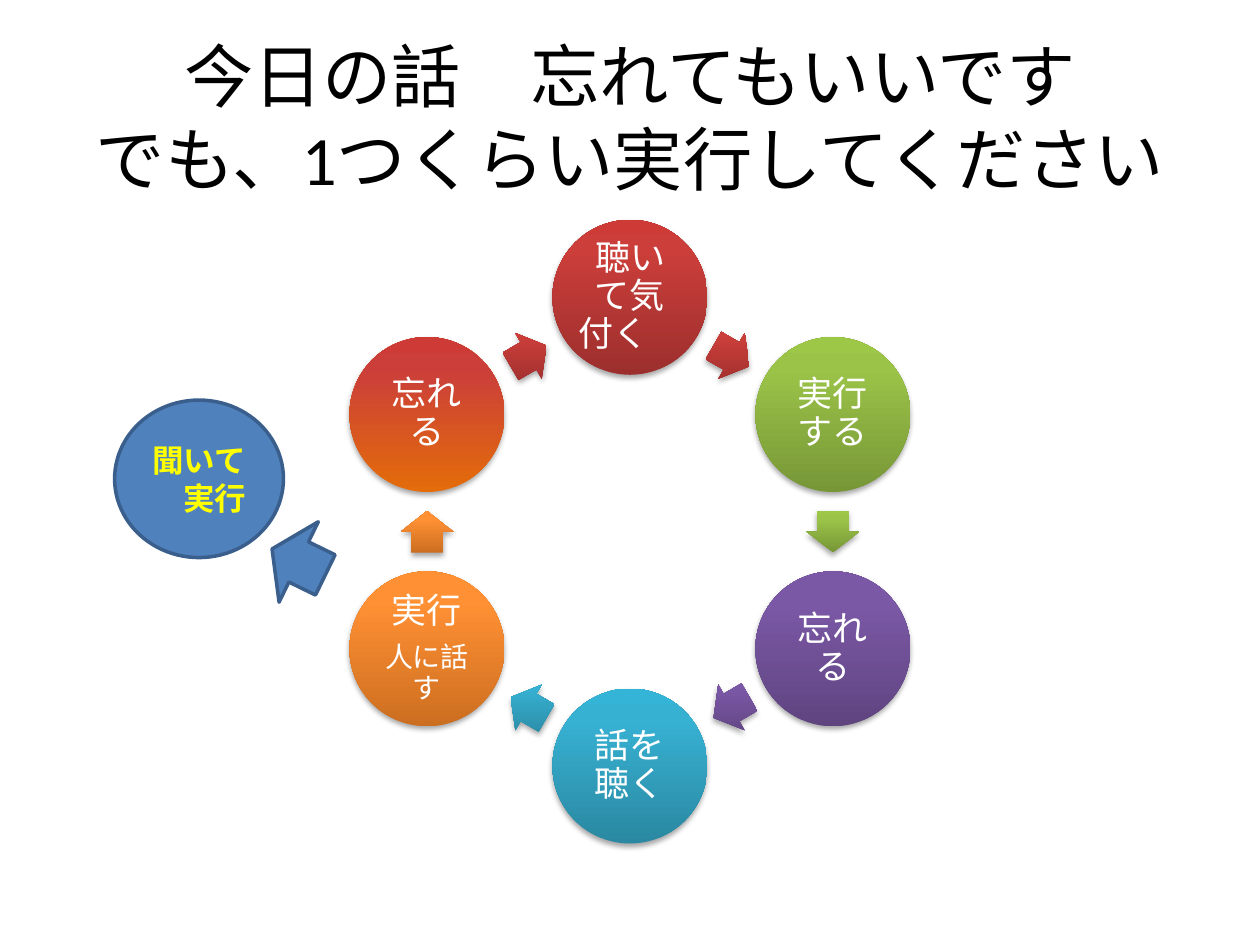
import math
from pptx import Presentation
from pptx import util as u
from pptx.dml.color import RGBColor
from pptx.enum import shapes, text
from pptx.oxml import parse_xml
from pptx.oxml.ns import nsdecls

FONT = "Calibri"
COLORS = {"black": "000000", "white": "FFFFFF", "yellow": "FFFF00",
          "blue": "4F81BD", "blue edge": "3A5F8C"}
GRADIENTS = {
    "red": ("9C2F2D", "CB3E3A", "CE3B37"),
    "green": ("779737", "9BC348", "9DC746"),
    "purple": ("5F4480", "7B58A6", "7C57A8"),
    "teal": ("2A88A2", "37B1D2", "34B4D6"),
    "orange": ("CC6E20", "FF9034", "FF9136"),
    "sunset": ("E46C0A", "CB3E3A", "CE3B37"),
}
STOPS = (0, 80, 100)
TITLE = "今日の話\u3000忘れてもいいです\vでも、1つくらい実行してください".replace("\u3000", "　")
STEPS = [
    ([("聴いて気付く\t", 20)], "red", "red"),
    ([("実行する", 20)], "green", "green"),
    ([("忘れる", 20)], "purple", "purple"),
    ([("話を聴く", 20)], "teal", "teal"),
    ([("実行", 20), ("人に話す", 16)], "orange", "orange"),
    ([("忘れる", 20)], "sunset", "red"),
]
SHORTCUT = [("聞いて", 18), ("　実行", 18)]

WIDTH, HEIGHT = 10, 7.5
CENTER_X, CENTER_Y = WIDTH / 2, 4.22
RADIUS, CIRCLE = 1.86, 1.23
ARROW_WIDTH, ARROW_HEIGHT = 0.33, 0.42


def add_centered(slide, kind, x, y, width, height, rotation=0):
    shape = slide.shapes.add_shape(
        kind, *(u.Inches(v) for v in (x - width / 2, y - height / 2, width, height)))
    shape.rotation = rotation
    return shape


def style_cycle(shape, gradient):
    stops = "".join(
        f'<a:gs pos="{stop * 1000}"><a:srgbClr val="{color}"/></a:gs>'
        for stop, color in zip(STOPS, GRADIENTS[gradient]))
    properties = shape._element.spPr
    properties.append(parse_xml(
        f'<a:gradFill {nsdecls("a")} rotWithShape="0"><a:gsLst>{stops}</a:gsLst>'
        '<a:lin ang="16200000" scaled="0"/></a:gradFill>'))
    shape.line.fill.background()
    properties.append(parse_xml(
        f'<a:effectLst {nsdecls("a")}><a:outerShdw blurRad="40000" dist="23000" '
        'dir="5400000" rotWithShape="0"><a:srgbClr val="000000">'
        '<a:alpha val="35000"/></a:srgbClr></a:outerShdw></a:effectLst>'))


def style_shortcut(shape):
    shape.shadow.inherit = False
    shape.fill.solid()
    shape.fill.fore_color.rgb = RGBColor.from_string(COLORS["blue"])
    shape.line.color.rgb = RGBColor.from_string(COLORS["blue edge"])
    shape.line.width = u.Pt(2)


def write(shape, lines, color, inset, bold=False, spacing=None, after=0):
    frame = shape.text_frame
    frame.word_wrap = True
    frame.vertical_anchor = text.MSO_ANCHOR.MIDDLE
    frame.margin_left = frame.margin_right = u.Inches(inset)
    frame.margin_top = frame.margin_bottom = u.Inches(min(inset, 0.05))
    for index, (words, size) in enumerate(lines):
        paragraph = frame.add_paragraph() if index else frame.paragraphs[0]
        paragraph.text = words
        paragraph.alignment = text.PP_ALIGN.CENTER
        paragraph.line_spacing = spacing
        paragraph.space_after = u.Pt(size * after)
        paragraph.font.name = FONT
        paragraph.font.size = u.Pt(size)
        paragraph.font.bold = bold
        paragraph.font.color.rgb = RGBColor.from_string(COLORS[color])


def build():
    presentation = Presentation()
    presentation.slide_width = u.Inches(WIDTH)
    presentation.slide_height = u.Inches(HEIGHT)
    slide = presentation.slides.add_slide(presentation.slide_layouts[6])

    title = slide.shapes.add_textbox(*(u.Inches(v) for v in (0.5, 0.3, 9, 1.25)))
    write(title, [(TITLE, 39.6)], "black", 0.1)

    step = 360 / len(STEPS)
    arrow_radius = RADIUS * math.cos(math.radians(step / 2))
    for index, (lines, circle_color, arrow_color) in enumerate(STEPS):
        angle = math.radians(index * step - 90)
        circle = add_centered(
            slide, shapes.MSO_SHAPE.OVAL, CENTER_X + RADIUS * math.cos(angle),
            CENTER_Y + RADIUS * math.sin(angle), CIRCLE, CIRCLE)
        style_cycle(circle, circle_color)
        write(circle, lines, "white", 0.03, spacing=0.9, after=0.35)

        angle = math.radians((index + 0.5) * step - 90)
        arrow = add_centered(
            slide, shapes.MSO_SHAPE.RIGHT_ARROW, CENTER_X + arrow_radius * math.cos(angle),
            CENTER_Y + arrow_radius * math.sin(angle), ARROW_WIDTH, ARROW_HEIGHT,
            (index + 0.5) * step)
        arrow.adjustments[0] = 0.6
        style_cycle(arrow, arrow_color)

    shortcut = add_centered(slide, shapes.MSO_SHAPE.OVAL, 1.58, 3.8, 1.34, 1.25)
    style_shortcut(shortcut)
    write(shortcut, SHORTCUT, "yellow", 0, bold=True)
    style_shortcut(add_centered(
        slide, shapes.MSO_SHAPE.DOWN_ARROW, 2.37, 4.46, 0.71, 0.47, 116))

    presentation.save("out.pptx")


if __name__ == "__main__":
    build()
